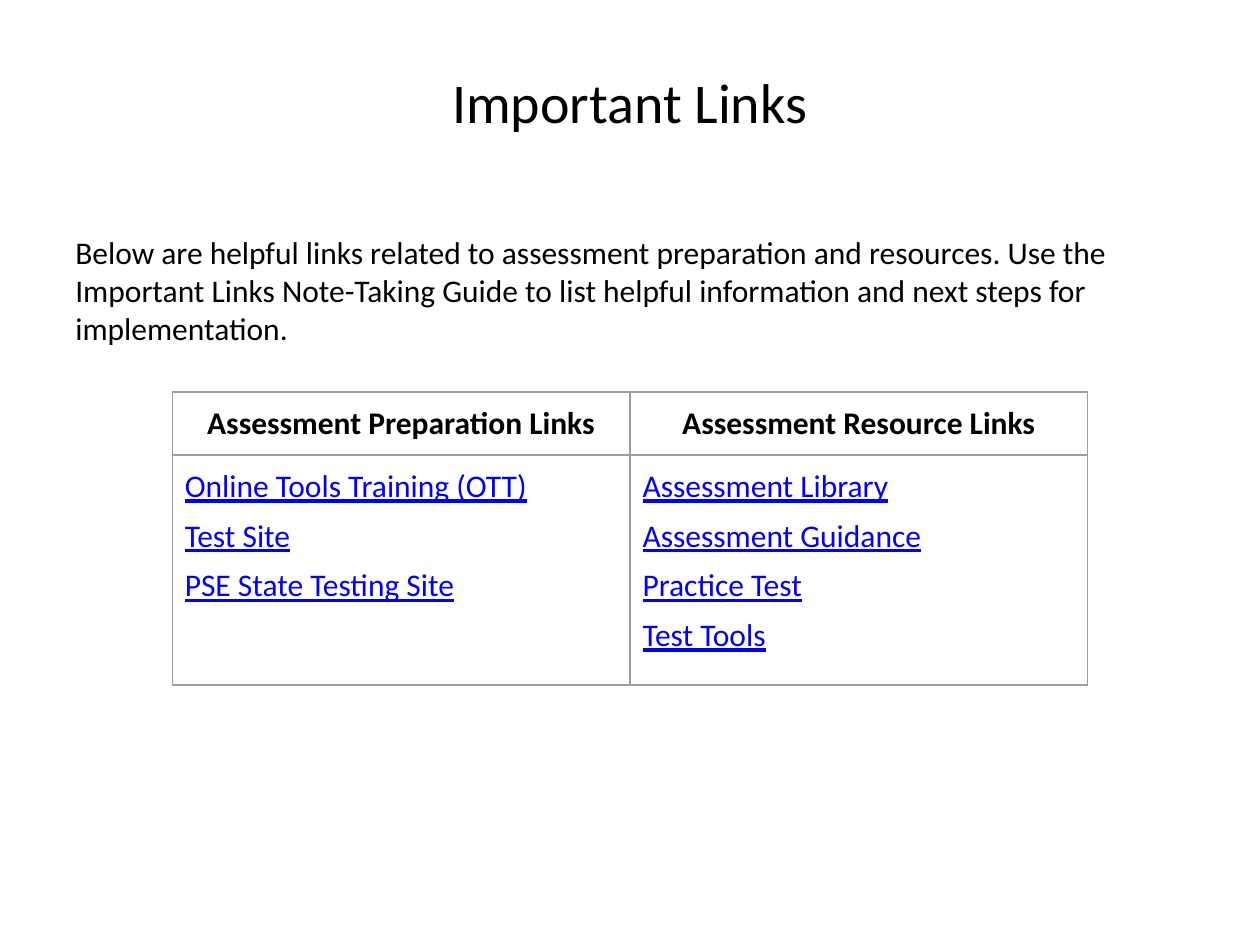
from lxml.etree import SubElement
from pptx import Presentation
from pptx.dml.color import RGBColor
from pptx.enum.text import MSO_ANCHOR as Anchor, PP_ALIGN as Align
from pptx.oxml.ns import qn
from pptx.util import Pt

FONT = "Calibri"
BLACK, LINK_BLUE, BORDER_GREY = "000000", "0000FF", "9E9E9E"
MARGIN = Pt(7.2)
LINKS = {
    "Assessment Preparation Links": [
        "Online Tools Training (OTT)", "Test Site", "PSE State Testing Site"],
    "Assessment Resource Links": [
        "Assessment Library", "Assessment Guidance", "Practice Test", "Test Tools"],
}


def color(hex_text):
    return RGBColor.from_string(hex_text)


def set_margins(holder):
    """Give a text frame or table cell the same margin on every side."""
    holder.margin_left = holder.margin_right = MARGIN
    holder.margin_top = holder.margin_bottom = MARGIN


def write(frame, lines, size=18, ink=BLACK, align=Align.LEFT, bold=False, underline=False):
    frame.text = "\n".join(lines)
    for index, para in enumerate(frame.paragraphs):
        para.alignment = align
        if index:
            para.space_before = Pt(6.4)
        for span in para.runs:
            font = span.font
            font.name, font.size = FONT, Pt(size)
            font.bold, font.underline = bold, underline
            font.color.rgb = color(ink)


def add_text(page, left, top, width, height, text, anchor=Anchor.TOP, **style):
    box = page.shapes.add_textbox(Pt(left), Pt(top), Pt(width), Pt(height))
    frame = box.text_frame
    frame.word_wrap = True
    frame.vertical_anchor = anchor
    set_margins(frame)
    write(frame, [text], **style)


def style_cell(cell):
    """Draw the four borders, then clear the banded fill."""
    properties = cell._tc.get_or_add_tcPr()
    for side in ("a:lnL", "a:lnR", "a:lnT", "a:lnB"):
        line = SubElement(properties, qn(side), w=str(Pt(0.75)))
        fill = SubElement(line, qn("a:solidFill"))
        SubElement(fill, qn("a:srgbClr"), val=BORDER_GREY)
    cell.fill.background()
    set_margins(cell)


def add_links_table(page, left, top, width, header_height, body_height):
    table = page.shapes.add_table(
        2, len(LINKS), Pt(left), Pt(top), Pt(width), Pt(header_height + body_height)).table
    table.rows[0].height, table.rows[1].height = Pt(header_height), Pt(body_height)
    for index, (heading, links) in enumerate(LINKS.items()):
        table.columns[index].width = Pt(width / len(LINKS))
        header, body = table.cell(0, index), table.cell(1, index)
        for cell in (header, body):
            style_cell(cell)
        write(header.text_frame, [heading], align=Align.CENTER, bold=True)
        write(body.text_frame, links, ink=LINK_BLUE, underline=True)


def main():
    deck = Presentation()
    deck.slide_width, deck.slide_height = Pt(720), Pt(540)
    page = deck.slides.add_slide(deck.slide_layouts[6])
    add_text(page, 36, 3, 648, 109, "Important Links",
             anchor=Anchor.MIDDLE, size=32, align=Align.CENTER)
    add_text(page, 36, 126, 648, 53,
             "Below are helpful links related to assessment preparation and resources. "
             "Use the Important Links Note-Taking Guide to list helpful information "
             "and next steps for implementation.")
    add_links_table(page, 98.4, 224, 523.2, 36, 131.4)
    deck.save("out.pptx")


if __name__ == "__main__":
    main()
